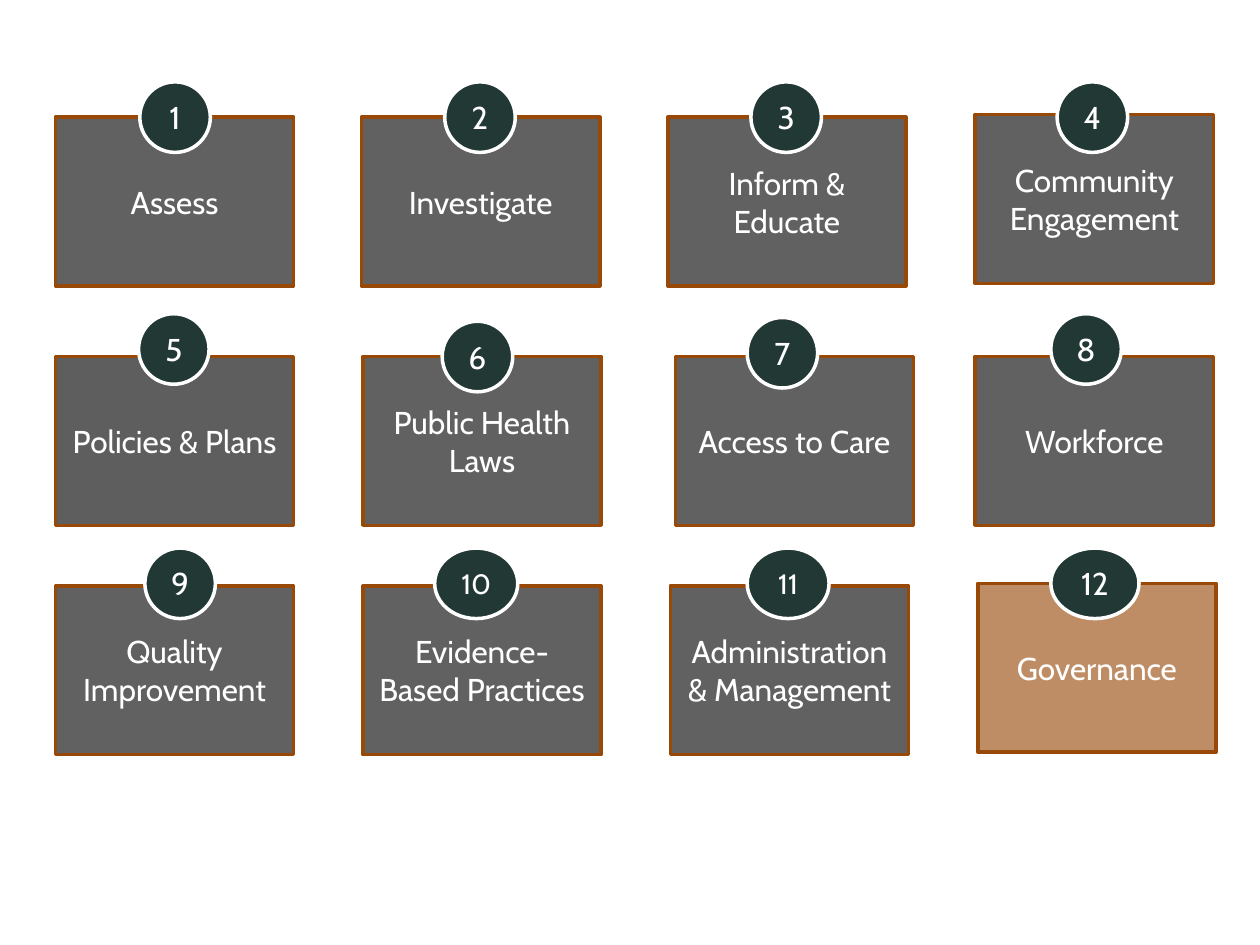
from lxml.etree import SubElement
from pptx import Presentation
from pptx.dml.color import RGBColor
from pptx.enum.shapes import MSO_SHAPE
from pptx.enum.text import MSO_ANCHOR, PP_ALIGN
from pptx.oxml.ns import qn
from pptx.util import Inches, Pt

COLORS = {"box": "000000", "accent": "984807", "badge": "213835", "white": "FFFFFF"}

# Grid of boxes, with small shifts for the boxes that sit off it
COLUMNS = [0.44, 2.88, 5.31, 7.74]
ROWS = [0.93, 2.83, 4.65]
BOX_W, BOX_H = 1.89, 1.34
SHIFTS = {2: (-0.01, 0), 3: (-0.01, 0), 4: (0, -0.02), 7: (0.05, 0),
          11: (0.01, 0), 12: (0.02, -0.02)}

# Label, badge left, badge top
SERVICES = [
    ("Assess", 1.11, 0.65),
    ("Investigate", 3.53, 0.65),
    ("Inform & Educate", 5.96, 0.65),
    ("Community Engagement", 8.39, 0.65),
    ("Policies & Plans", 1.1, 2.49),
    ("Public Health Laws", 3.51, 2.55),
    ("Access to Care", 5.93, 2.52),
    ("Workforce", 8.34, 2.49),
    ("Quality Improvement", 1.15, 4.35),
    ("Evidence-Based Practices", 3.45, 4.35),
    ("Administration & Management", 5.93, 4.35),
    ("Governance", 8.34, 4.35),
]
BADGE_SIZE = 0.56
WIDE_BADGES = {10: 0.66, 11: 0.65, 12: 0.7}
SMALL_NUMBERS = {10: 16, 11: 16}


class SlideBuilder:
    font = "Cabin"
    line_width = 2

    def __init__(self, slide):
        self.s = slide

    def color(self, name):
        return RGBColor.from_string(COLORS[name])

    def shape(self, kind, at, fill, line, text, size=18):
        sp = self.s.shapes.add_shape(kind, *(Inches(v) for v in at))
        sp.shadow.inherit = False
        sp.fill.solid()
        sp.fill.fore_color.rgb = self.color(fill)
        sp.line.color.rgb = self.color(line)
        sp.line.width = Pt(self.line_width)
        tf = sp.text_frame
        tf.vertical_anchor = MSO_ANCHOR.MIDDLE
        p = tf.paragraphs[0]
        p.alignment = PP_ALIGN.CENTER
        r = p.add_run()
        r.text = text
        r.font.name = self.font
        r.font.size = Pt(size)
        r.font.color.rgb = self.color("white")
        return sp

    def box(self, left, top, text, fill, opacity):
        sp = self.shape(MSO_SHAPE.RECTANGLE, (left, top, BOX_W, BOX_H),
                        fill, "accent", text)
        sp.text_frame.word_wrap = True
        clr = sp.fill._xPr.find(qn("a:solidFill"))[0]
        SubElement(clr, qn("a:alpha")).set("val", str(opacity * 1000))

    def badge(self, left, top, number):
        width = WIDE_BADGES.get(number, BADGE_SIZE)
        sp = self.shape(MSO_SHAPE.OVAL, (left, top, width, BADGE_SIZE),
                        "badge", "white", str(number), SMALL_NUMBERS.get(number, 18))
        sp.text_frame.word_wrap = False


def main():
    prs = Presentation()
    prs.slide_width, prs.slide_height = Inches(10), Inches(7.5)
    builder = SlideBuilder(prs.slides.add_slide(prs.slide_layouts[6]))

    # Service boxes, the last one highlighted
    for number, (label, _, _) in enumerate(SERVICES, 1):
        row, col = divmod(number - 1, len(COLUMNS))
        dx, dy = SHIFTS.get(number, (0, 0))
        fill = "accent" if number == len(SERVICES) else "box"
        builder.box(COLUMNS[col] + dx, ROWS[row] + dy, label, fill,
                    63 if number == 5 else 62)

    # Number badges on top of the boxes
    for number, (_, left, top) in enumerate(SERVICES, 1):
        builder.badge(left, top, number)

    prs.save("out.pptx")


if __name__ == "__main__":
    main()
